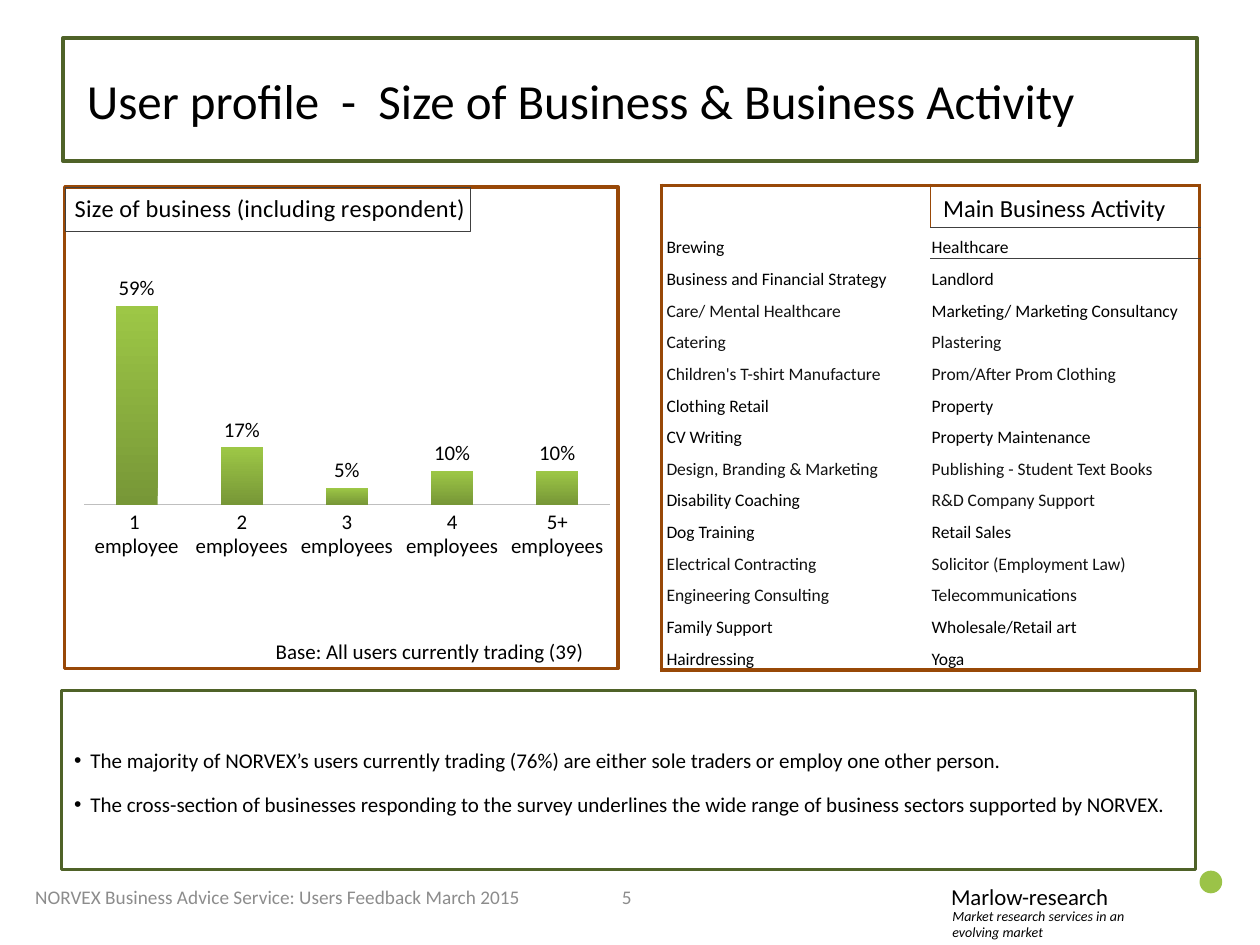
from lxml import etree
from pptx import Presentation, util as u
from pptx.chart.data import CategoryChartData
from pptx.dml.color import RGBColor
from pptx.enum import chart as charts, shapes, text
from pptx.oxml import parse_xml
from pptx.oxml.ns import nsdecls, qn

FONT = "Calibri"
BLACK, GRAY, INK, RULE = "000000", "8C8C8C", "111111", "404040"
GREEN, BROWN = "4F6228", "984807"
color = RGBColor.from_string


def add_text(paragraph, words, size, hex_color=BLACK, italic=False):
    run = paragraph.add_run()
    run.text = words
    run.font.name = FONT
    run.font.size = u.Pt(size)
    run.font.color.rgb = color(hex_color)
    run.font.italic = italic


def set_layout(parent, index, **values):
    """Give a chart part a manual layout, stored as its child at index."""
    for old in parent.findall(qn("c:layout")):
        parent.remove(old)
    layout = parse_xml(f"<c:layout {nsdecls('c')}><c:manualLayout/></c:layout>")
    for tag, value in values.items():
        etree.SubElement(layout[0], qn(f"c:{tag}")).set("val", str(value))
    parent.insert(index, layout)


presentation = Presentation()
presentation.slide_width, presentation.slide_height = u.Inches(10), u.Inches(7.5)
slide = presentation.slides.add_slide(presentation.slide_layouts[6])

# Framed title and findings
frames = []
for left, top, height in [(0.5, 0.3, 0.98), (0.49, 5.48, 1.42)]:
    frame = slide.shapes.add_shape(
        shapes.MSO_SHAPE.RECTANGLE,
        u.Inches(left), u.Inches(top), u.Inches(9), u.Inches(height))
    frame.shadow.inherit = False
    frame.fill.background()
    frame.line.color.rgb = color(GREEN)
    frame.line.width = u.Pt(2)
    frame.text_frame.word_wrap = True
    frame.text_frame.paragraphs[0].alignment = text.PP_ALIGN.LEFT
    frames.append(frame.text_frame)
title, findings = frames

title.margin_left = u.Inches(0.19)
title.vertical_anchor = text.MSO_ANCHOR.MIDDLE
add_text(title.paragraphs[0], "User profile  -  Size of Business & Business Activity", 28)

findings.vertical_anchor = text.MSO_ANCHOR.TOP
findings.margin_top = u.Inches(0.45)
findings.add_paragraph()
for paragraph, words in zip(findings.paragraphs, [
    "The majority of NORVEX’s users currently trading (76%) are either sole traders "
    "or employ one other person.",
    "The cross-section of businesses responding to the survey underlines the wide range "
    "of business sectors supported by NORVEX.",
]):
    paragraph.alignment = text.PP_ALIGN.LEFT
    properties = paragraph._p.get_or_add_pPr()
    properties.set("marL", str(u.Inches(0.13)))
    properties.set("indent", str(-u.Inches(0.13)))
    etree.SubElement(properties, qn("a:buFont")).set("typeface", "Arial")
    etree.SubElement(properties, qn("a:buChar")).set("char", "•")
    add_text(paragraph, words, 12)
findings.paragraphs[1].space_before = u.Pt(11)

# Size of business chart
data = CategoryChartData(number_format="0%")
data.categories = ["1 \nemployee"] + [f"{count} employees" for count in ("2", "3", "4", "5+")]
data.add_series("Series 1", [0.59, 0.17, 0.05, 0.1, 0.1])
chart = slide.shapes.add_chart(
    charts.XL_CHART_TYPE.COLUMN_CLUSTERED,
    u.Inches(0.5), u.Inches(1.47), u.Inches(4.42), u.Inches(3.85), data).chart
chart.has_legend = False
chart.font.name = FONT
chart.font.size = u.Pt(18)
chart.font.color.rgb = color(BLACK)
chart.element.find(qn("c:chart")).addnext(parse_xml(
    f'<c:spPr {nsdecls("c", "a")}><a:noFill/><a:ln w="{u.Pt(2)}"><a:solidFill>'
    f'<a:srgbClr val="{BROWN}"/></a:solidFill></a:ln></c:spPr>'))

chart.has_title = True
heading = chart.chart_title
add_text(heading.text_frame.paragraphs[0], " Size of business (including respondent)", 14)
heading.text_frame.paragraphs[0].runs[0].font.bold = False
heading.format.line.color.rgb = color(RULE)
heading.format.line.width = u.Pt(0.25)
set_layout(heading.element, 1, xMode="edge", yMode="edge", x=0, y=0)
set_layout(chart.element.find(".//" + qn("c:plotArea")), 0,
           layoutTarget="inner", xMode="edge", yMode="edge",
           x=0.035, y=0.17, w=0.95, h=0.49)

chart.value_axis.visible = False
chart.value_axis.has_major_gridlines = False
chart.value_axis.minimum_scale = 0
chart.value_axis.maximum_scale = 0.7
category_axis = chart.category_axis
category_axis.major_tick_mark = charts.XL_TICK_MARK.NONE
category_axis.tick_labels.font.size = u.Pt(12)
category_axis.format.line.color.rgb = color("BFBFBF")
category_axis.format.line.width = u.Pt(0.75)

plot = chart.plots[0]
plot.gap_width = 150
plot.vary_by_categories = False
plot.has_data_labels = True
labels = plot.data_labels
labels.show_value = True
labels.number_format, labels.number_format_is_linked = "0%", False
labels.position = charts.XL_LABEL_POSITION.OUTSIDE_END
labels.font.size = u.Pt(12)
bar_fill = plot.series[0].format.fill
bar_fill.gradient()
bar_fill.gradient_angle = 90
for stop, shade in zip(bar_fill.gradient_stops, ["779737", "9DC746"]):
    stop.color.rgb = color(shade)

# Main business activity table
activities = [
    ("Brewing", "Healthcare"),
    ("Business and Financial Strategy", "Landlord"),
    ("Care/ Mental Healthcare", "Marketing/ Marketing Consultancy"),
    ("Catering", "Plastering"),
    ("Children's T-shirt Manufacture", "Prom/After Prom Clothing"),
    ("Clothing Retail", "Property"),
    ("CV Writing", "Property Maintenance"),
    ("Design, Branding & Marketing", "Publishing - Student Text Books"),
    ("Disability Coaching", "R&D Company Support"),
    ("Dog Training", "Retail Sales"),
    ("Electrical Contracting", "Solicitor (Employment Law)"),
    ("Engineering Consulting", "Telecommunications"),
    ("Family Support", "Wholesale/Retail art"),
    ("Hairdressing", "Yoga"),
]
ink_cells = {(3, 0), (9, 1)} | {(row, column) for row in (4, 5, 8, 11, 12) for column in (0, 1)}
last_row = len(activities)
table_shape = slide.shapes.add_table(
    last_row + 1, 2, u.Inches(5.25), u.Inches(1.47), u.Inches(4.27), u.Inches(3.85))
table = table_shape.table
table.first_row = table.horz_banding = False
table_shape._element.find(".//" + qn("a:tableStyleId")).text = "{2D5ABB26-0587-4C30-8999-92F81FD0307C}"
for index, row in enumerate(table.rows):
    row.height = u.Inches(3.52 / last_row if index else 0.33)

thick, thin, rule = (BROWN, 2.25), (BROWN, 0.25), (RULE, 0.25)
for row, entries in enumerate([("", "Main Business Activity")] + activities):
    for column, words in enumerate(entries):
        cell = table.cell(row, column)
        cell.fill.background()
        cell.vertical_anchor = text.MSO_ANCHOR.BOTTOM
        paragraph = cell.text_frame.paragraphs[0]
        if row:
            cell.margin_left = u.Inches(0.01 if column else 0.04)
            cell.margin_top = cell.margin_right = u.Inches(0.01)
            cell.margin_bottom = 0
            add_text(paragraph, words, 10, INK if (row, column) in ink_cells else BLACK)
        elif words:
            paragraph.line_spacing = 0.5
            add_text(paragraph, words, 14)
        else:
            # A small empty line keeps the heading row at its own height
            etree.SubElement(paragraph._p, qn("a:endParaRPr")).set("sz", "800")

        borders = {"lnR" if column else "lnL": thick}
        if row == 0:
            borders["lnT"] = thick
            borders["lnL" if column else "lnR"] = thin
        if row == last_row:
            borders["lnB"] = thick
        if column and row < 2:
            borders["lnB"] = rule
        if column and row == 1:
            borders["lnT"] = rule
        properties = cell._tc.get_or_add_tcPr()
        sides = [side for side in ("lnL", "lnR", "lnT", "lnB") if side in borders]
        for position, side in enumerate(sides):
            line_color, width = borders[side]
            properties.insert(position, parse_xml(
                f'<a:{side} {nsdecls("a")} w="{u.Pt(width)}"><a:solidFill>'
                f'<a:srgbClr val="{line_color}"/></a:solidFill></a:{side}>'))

# Chart base, footer and sender
top, middle = text.MSO_ANCHOR.TOP, text.MSO_ANCHOR.MIDDLE
left_align, center = text.PP_ALIGN.LEFT, text.PP_ALIGN.CENTER
for words, box, size, shade, anchor, alignment, italic in [
    ("Base: All users currently trading (39)", (2.09, 5.02, 2.8, 0.3), 12, BLACK, top, left_align, False),
    ("NORVEX Business Advice Service: Users Feedback March 2015", (0.18, 6.92, 4.72, 0.4), 11, GRAY, middle, left_align, False),
    ("5", (4.4, 6.92, 1.15, 0.4), 11, GRAY, middle, center, False),
    ("Marlow-research", (7.45, 6.96, 1.7, 0.32), 13, BLACK, top, left_align, False),
    ("Market research services in an evolving market", (7.46, 7.15, 1.76, 0.18), 8, BLACK, top, left_align, True),
]:
    text_frame = slide.shapes.add_textbox(*map(u.Inches, box)).text_frame
    text_frame.word_wrap = True
    text_frame.vertical_anchor = anchor
    text_frame.paragraphs[0].alignment = alignment
    add_text(text_frame.paragraphs[0], words, size, shade, italic)

emblem = slide.shapes.add_shape(
    shapes.MSO_SHAPE.OVAL, u.Inches(9.52), u.Inches(6.91), u.Inches(0.18), u.Inches(0.18))
emblem.shadow.inherit = False
emblem.fill.solid()
emblem.fill.fore_color.rgb = color("9BC348")
emblem.line.fill.background()

presentation.save("out.pptx")
